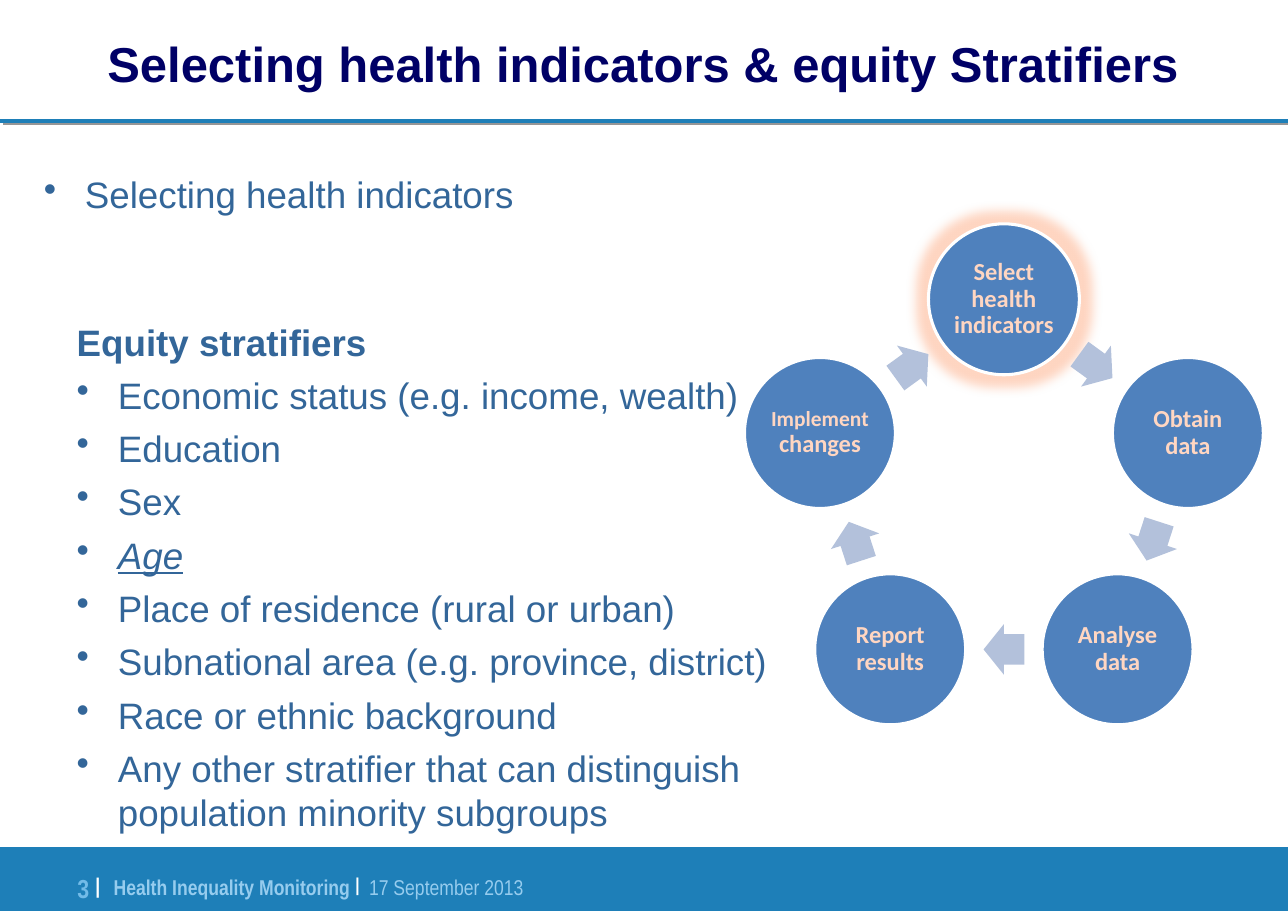
import math

from lxml import etree
from pptx import Presentation
from pptx import util as u
from pptx.dml.color import RGBColor
from pptx.enum import shapes, text
from pptx.oxml import ns

NAVY, TEXT_BLUE, BAND_BLUE = "000066", "336699", "1E7FB8"
PALE_BLUE, NUMBER_BLUE, WHITE = "96CCEE", "72BBE8", "FFFFFF"
CIRCLE_BLUE, ARROW_BLUE, PEACH = "4F81BD", "B3C1DB", "FFD6C2"


def rgb(value):
    return RGBColor.from_string(value)


def add_xml(parent, tag, **attributes):
    return etree.SubElement(parent, ns.qn(tag), attributes)


def add_effect(properties, tag, color, **attributes):
    """Append an effect list holding one coloured effect."""
    effects = add_xml(properties, "a:effectLst")
    effect = add_xml(effects, tag, **attributes)
    add_xml(effect, "a:srgbClr", val=color)


def set_font(font, size=None, color=None, name=None, **flags):
    if size:
        font.size = u.Pt(size)
    if color:
        font.color.rgb = rgb(color)
    if name:
        font.name = name
    for flag, value in flags.items():
        setattr(font, flag, value)


class SlideBuilder:
    body_font = "Arial"
    footer_font = "Arial Narrow"
    cycle_font = "Calibri"

    def __init__(self, slide):
        self.shapes = slide.shapes

    def shape(self, kind, box, fill, line=None):
        part = self.shapes.add_shape(kind, *map(u.Cm, box))
        part.shadow.inherit = False
        part.fill.solid()
        part.fill.fore_color.rgb = rgb(fill)
        if line:
            part.line.color.rgb = rgb(line)
            part.line.width = u.Pt(2)
        else:
            part.line.fill.background()
        return part

    def centred(self, kind, center, width, height, fill, line=None):
        x, y = center
        box = (x - width / 2, y - height / 2, width, height)
        return self.shape(kind, box, fill, line)

    def rule(self, y, width):
        line = self.shapes.add_connector(
            shapes.MSO_CONNECTOR.STRAIGHT, 0, u.Cm(y), u.Cm(width), u.Cm(y))
        line.line.color.rgb = rgb(BAND_BLUE)
        line.line.width = u.Pt(3)
        add_effect(line._element.spPr, "a:outerShdw", "969696",
                   dist=str(u.Pt(2.2)), dir="1620000", algn="ctr")

    def frame(self, box, inset=None):
        frame = self.shapes.add_textbox(*map(u.Cm, box)).text_frame
        self.prepare(frame, inset)
        return frame

    def prepare(self, frame, inset):
        frame.word_wrap = True
        if inset is not None:
            frame.margin_left = frame.margin_right = u.Cm(inset)
            frame.margin_top = frame.margin_bottom = u.Cm(inset)

    def bullet(self, paragraph, words, **flags):
        properties = paragraph._p.get_or_add_pPr()
        properties.set("marL", str(u.Cm(0.95)))
        properties.set("indent", str(-u.Cm(0.95)))
        add_xml(properties, "a:buChar", char="•")
        self.words(paragraph, words, size=24, color=TEXT_BLUE,
                   name=self.body_font, **flags)

    def words(self, paragraph, words, **style):
        set_font(paragraph.font, **style)
        paragraph.add_run().text = words

    def pieces(self, paragraph, pieces):
        """Add runs given as (words, style), style may hold a baseline in percent."""
        for words, style in pieces:
            style = dict(style)
            baseline = style.pop("baseline", None)
            run = paragraph.add_run()
            run.text = words
            set_font(run.font, **style)
            if baseline:
                run.font._element.set("baseline", str(baseline * 1000))

    def title(self, words, box):
        frame = self.frame(box, inset=0)
        frame.vertical_anchor = text.MSO_ANCHOR.MIDDLE
        heading = frame.paragraphs[0]
        heading.alignment = text.PP_ALIGN.CENTER
        self.words(heading, words, size=32, color=NAVY,
                   name=self.body_font, bold=True)
        add_effect(heading.runs[0].font._element, "a:outerShdw", PALE_BLUE,
                   dist=str(u.Pt(2)), dir="2700000", algn="tl")

    def step(self, center, pieces):
        circle = self.centred(shapes.MSO_SHAPE.OVAL, center, 3.48, 3.48,
                              CIRCLE_BLUE, WHITE)
        frame = circle.text_frame
        self.prepare(frame, inset=0.05)
        frame.vertical_anchor = text.MSO_ANCHOR.MIDDLE
        label = frame.paragraphs[0]
        label.alignment = text.PP_ALIGN.CENTER
        label.line_spacing = 0.9
        set_font(label.font, color=PEACH, name=self.cycle_font, bold=True)
        self.pieces(label, [(words, {"size": size}) for words, size in pieces])
        return circle

    def cycle(self, steps, center, radius, arrow_radius):
        """Place the steps clockwise on a ring, with an arrow after each."""
        def on_ring(angle, distance):
            turn = math.radians(angle)
            return (center[0] + distance * math.sin(turn),
                    center[1] - distance * math.cos(turn))

        gap = 360 / len(steps)
        for index, pieces in enumerate(steps):
            circle = self.step(on_ring(index * gap, radius), pieces)
            if index == 0:
                effects = circle._element.spPr.find(ns.qn("a:effectLst"))
                glow = add_xml(effects, "a:glow", rad=str(u.Pt(14)))
                add_xml(glow, "a:srgbClr", val=PEACH)
            angle = (index + 0.5) * gap
            arrow = self.centred(shapes.MSO_SHAPE.RIGHT_ARROW,
                                 on_ring(angle, arrow_radius), 0.94, 1.17, ARROW_BLUE)
            arrow.adjustments[0] = 0.6
            arrow.adjustments[1] = 0.5
            arrow.rotation = angle

    def footer(self):
        self.shape(shapes.MSO_SHAPE.RECTANGLE, (0, 19.53, 29.7, 1.47), BAND_BLUE)
        label = self.frame((2.62, 19.91, 10.69, 0.71), inset=0).paragraphs[0]
        tabs = add_xml(label._p.get_or_add_pPr(), "a:tabLst")
        add_xml(tabs, "a:tab", pos=str(u.Cm(5.89)), algn="l")
        set_font(label.font, name=self.footer_font)
        self.pieces(label, [
            ("Health Inequality Monitoring ", {"size": 14, "color": PALE_BLUE, "bold": True}),
            ("|", {"size": 21, "color": WHITE, "bold": True, "baseline": 12}),
            ("\t17 September 2013", {"size": 14, "color": PALE_BLUE}),
        ])
        number = self.frame((1.17, 19.86, 1.14, 1.02), inset=0).paragraphs[0]
        number.alignment = text.PP_ALIGN.RIGHT
        set_font(number.font, name=self.footer_font, bold=True)
        self.pieces(number, [
            ("3 ", {"size": 17, "color": NUMBER_BLUE}),
            ("|", {"size": 24, "color": WHITE, "baseline": 14}),
        ])

    def stratifiers(self, heading, items, emphasised):
        frame = self.frame((1.52, 6.73, 16.87, 12.75))
        first = frame.paragraphs[0]
        first.line_spacing = 1.5
        self.words(first, heading, size=24, color=TEXT_BLUE,
                   name=self.body_font, bold=True)
        for item in items:
            paragraph = frame.add_paragraph()
            paragraph.space_before = u.Pt(6)
            flags = {"italic": True, "underline": True} if item == emphasised else {}
            self.bullet(paragraph, item, **flags)


def main():
    deck = Presentation()
    deck.slide_width, deck.slide_height = u.Cm(29.7), u.Cm(21)
    page = SlideBuilder(deck.slides.add_slide(deck.slide_layouts[6]))

    page.rule(2.79, 29.7)
    page.footer()
    page.title("Selecting health indicators & equity Stratifiers", (0, 0, 29.7, 2.9))
    steps = [
        [("Select health indicators", 16)],
        [("Obtain data", 16)],
        [("Analyse data", 16)],
        [("Report results", 16)],
        [("Implement ", 14), ("changes", 16)],
    ]
    page.cycle(steps, center=(23.15, 11.36), radius=4.46, arrow_radius=3.61)

    topic = page.frame((0.76, 3.84, 19.56, 1.27)).paragraphs[0]
    page.bullet(topic, "Selecting health indicators")
    page.stratifiers("Equity stratifiers", [
        "Economic status (e.g. income, wealth)",
        "Education",
        "Sex",
        "Age",
        "Place of residence (rural or urban)",
        "Subnational area (e.g. province, district)",
        "Race or ethnic background",
        "Any other stratifier that can distinguish population minority subgroups",
    ], emphasised="Age")
    deck.save("out.pptx")


if __name__ == "__main__":
    main()
